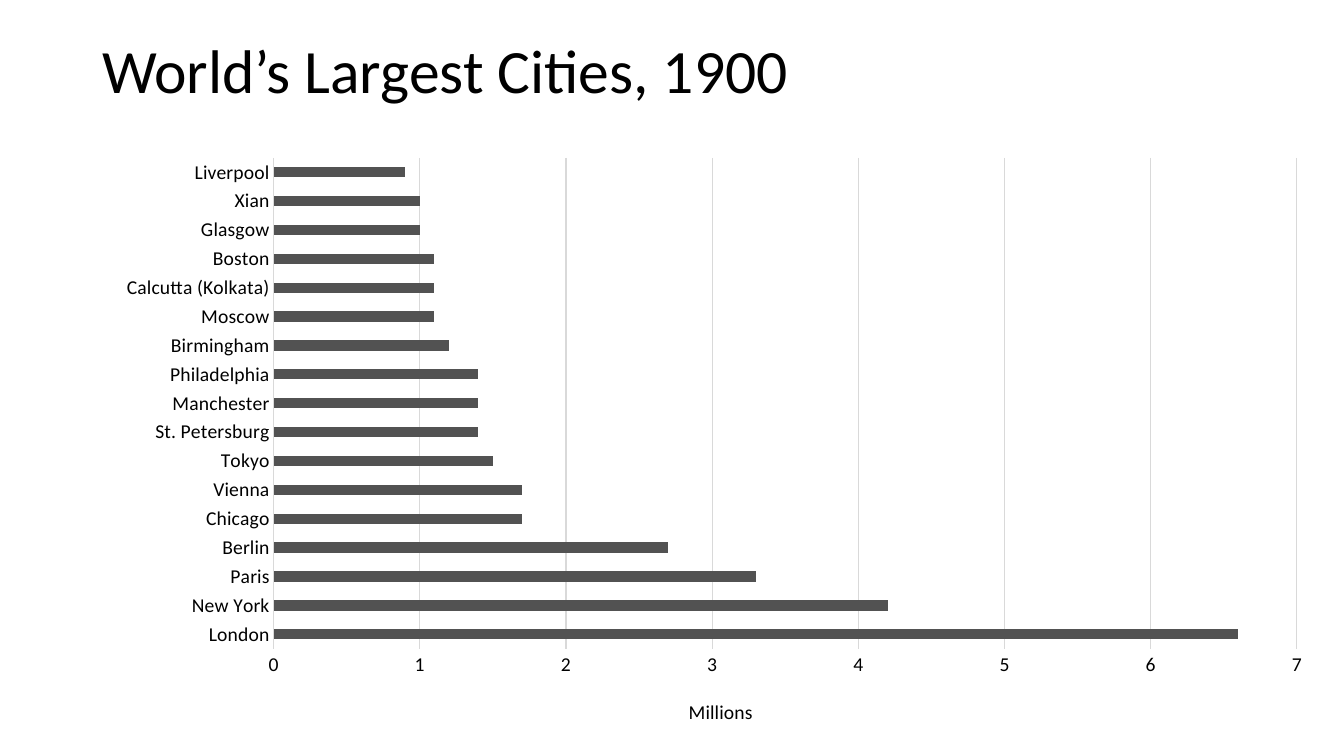
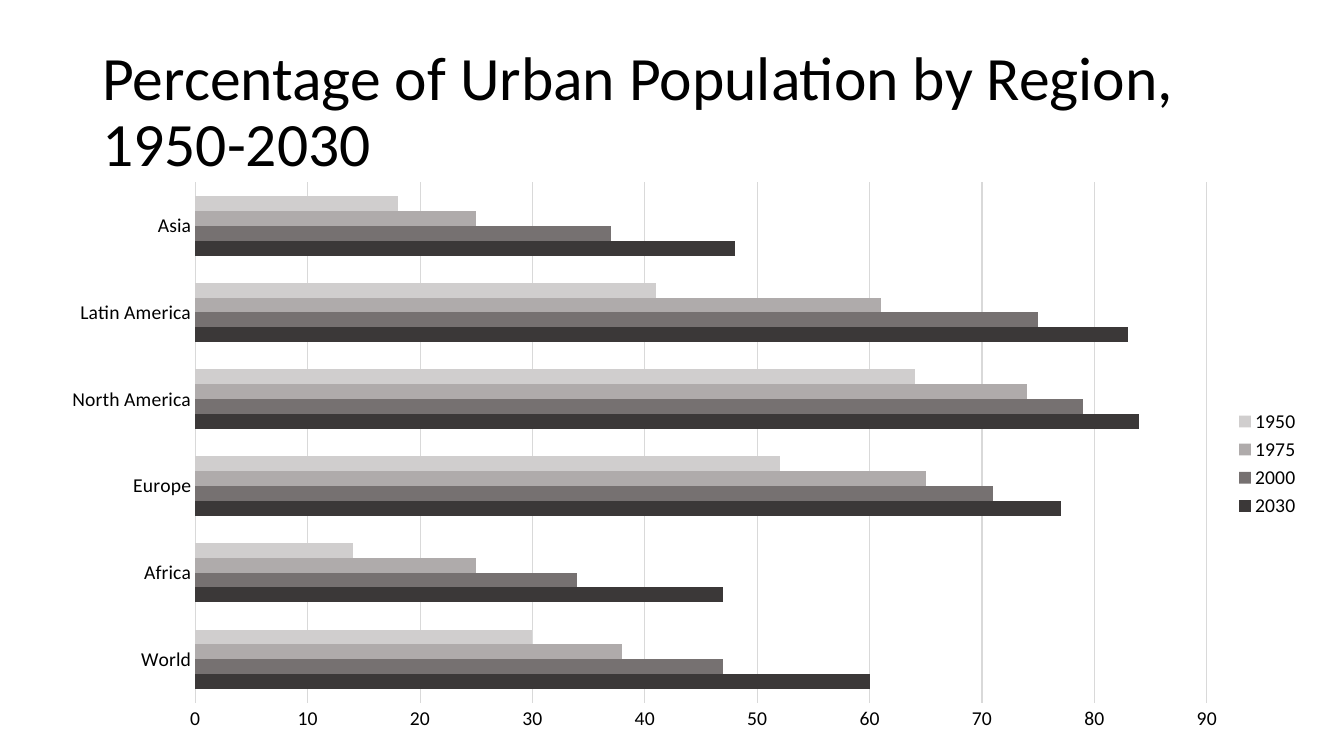
from lxml import etree
from pptx import Presentation
from pptx import util as u
from pptx.chart.data import CategoryChartData
from pptx.dml.color import RGBColor
from pptx.enum import chart as kinds, text
from pptx.oxml.ns import qn

# Shared look: a grid of 80 columns by 150 rows
WIDE, HIGH = u.Inches(13.333), u.Inches(7.5)
COL, ROW = WIDE / 80, HIGH / 150
FACE, INK, RULE = "Calibri", "000000", "D9D9D9"
HEAD = {"name": FACE, "size": u.Pt(44), "bold": False}
BODY = {"name": FACE, "size": u.Pt(14), "bold": False}

# Slide content
CITIES = {
    "London": 6.6, "New York": 4.2, "Paris": 3.3, "Berlin": 2.7,
    "Chicago": 1.7, "Vienna": 1.7, "Tokyo": 1.5, "St. Petersburg": 1.4,
    "Manchester": 1.4, "Philadelphia": 1.4, "Birmingham": 1.2,
    "Moscow": 1.1, "Calcutta (Kolkata)": 1.1, "Boston": 1.1,
    "Glasgow": 1, "Xian": 1, "Liverpool": 0.9,
}
AREAS = ["World", "Africa", "Europe", "North America", "Latin America", "Asia"]
YEARS = [
    ("2030", [60, 47, 77, 84, 83, 48], "3B3838"),
    ("2000", [47, 34, 71, 79, 75, 37], "767171"),
    ("1975", [38, 25, 65, 74, 61, 25], "AFABAB"),
    ("1950", [30, 14, 52, 64, 41, 18], "D0CECE"),
]


def color(code):
    return RGBColor.from_string(code)


def grid(left, top, width, height):
    """Turn columns and rows into lengths."""
    return [round(n) for n in (left * COL, top * ROW, width * COL, height * ROW)]


def assign(item, values):
    for name, value in values.items():
        setattr(item, name, value)


def style(font, look):
    assign(font, look)
    font.color.rgb = color(INK)


def stroke(line):
    line.width = u.Pt(0.75)
    line.color.rgb = color(RULE)


def place(parent, inner=False, **shares):
    """Fix a chart part at shares of the chart's size."""
    layout = parent.find(qn("c:layout"))
    if layout is None:
        layout = etree.Element(qn("c:layout"))
        parent.insert(0, layout)
    manual = etree.SubElement(layout, qn("c:manualLayout"))
    rules = {"layoutTarget": "inner"} if inner else {}
    rules.update(xMode="edge", yMode="edge", **shares)
    for name, value in rules.items():
        etree.SubElement(manual, qn("c:" + name)).set("val", str(value))


def title(slide, words, top):
    frame = slide.shapes.add_textbox(*grid(5.5, top, 69, 29)).text_frame
    assign(frame, {"word_wrap": True, "vertical_anchor": text.MSO_ANCHOR.MIDDLE})
    para = frame.paragraphs[0]
    para.line_spacing = 0.9
    run = para.add_run()
    run.text = words
    style(run.font, HEAD)


def bars(slide, at, names, rows, top, step, plot):
    """Add a bar chart; each row is a name, its values and its colour."""
    data = CategoryChartData()
    data.categories = names
    for name, values, _ in rows:
        data.add_series(name, values)
    kind = kinds.XL_CHART_TYPE.BAR_CLUSTERED
    chart = slide.shapes.add_chart(kind, *grid(*at), data).chart
    assign(chart, {"has_title": False, "has_legend": False})
    style(chart.font, BODY)

    # Series
    assign(chart.plots[0], {"gap_width": 182, "overlap": 0,
                            "vary_by_categories": False})
    for series, (_, _, code) in zip(chart.plots[0].series, rows):
        series.format.fill.solid()
        series.format.fill.fore_color.rgb = color(code)

    # Axes
    cats, vals = chart.category_axis, chart.value_axis
    for axis in (cats, vals):
        assign(axis, {"major_tick_mark": kinds.XL_TICK_MARK.NONE,
                      "minor_tick_mark": kinds.XL_TICK_MARK.NONE})
        style(axis.tick_labels.font, BODY)
    stroke(cats.format.line)
    assign(vals, {"minimum_scale": 0, "maximum_scale": top,
                  "major_unit": step, "has_major_gridlines": True})
    assign(vals.tick_labels, {"number_format": "0",
                              "number_format_is_linked": False})
    stroke(vals.major_gridlines.format.line)
    vals.format.line.fill.background()

    area = chart.element.find(".//" + qn("c:plotArea"))
    place(area, inner=True, **dict(zip("xywh", plot)))
    return chart


def label(axis, words, x, y):
    name = axis.axis_title
    run = name.text_frame.paragraphs[0].add_run()
    run.text = words
    style(run.font, BODY)
    place(name.element, x=x, y=y)


def legend(chart):
    chart.has_legend = True
    assign(chart.legend, {"position": kinds.XL_LEGEND_POSITION.RIGHT,
                          "include_in_layout": False})
    style(chart.legend.font, BODY)


def main():
    deck = Presentation()
    assign(deck, {"slide_width": WIDE, "slide_height": HIGH})
    blank = deck.slide_layouts[6]

    # Largest cities
    slide = deck.slides.add_slide(blank)
    title(slide, "World’s Largest Cities, 1900", 0)
    rows = [("Series 1", CITIES.values(), "525252")]
    chart = bars(slide, (1, 29, 78, 116), CITIES.keys(), rows, 7, 1,
                 (0.196, 0.02, 0.781, 0.841))
    label(chart.value_axis, "Millions", 0.51, 0.94)

    # Urban share by region
    slide = deck.slides.add_slide(blank)
    title(slide, "Percentage of Urban Population by Region, 1950-2030", 8)
    chart = bars(slide, (0, 34, 78, 116), AREAS, YEARS, 90, 10,
                 (0.149, 0.019, 0.772, 0.89))
    legend(chart)

    deck.save("out.pptx")


if __name__ == "__main__":
    main()
